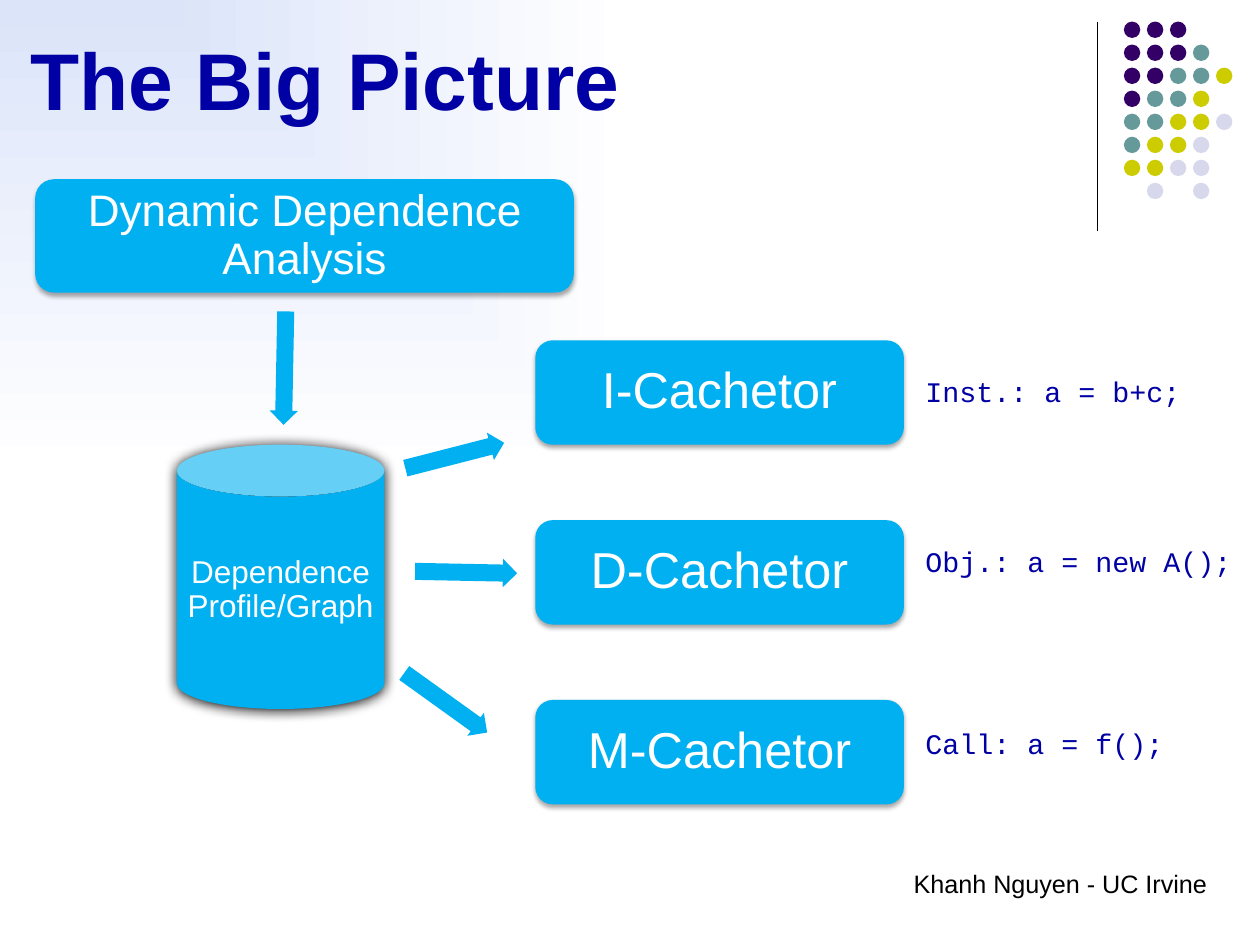
from lxml import etree
from pptx import Presentation
from pptx import util as u
from pptx.dml.color import RGBColor
from pptx.enum import shapes, text
from pptx.oxml import ns, parse_xml

TITLE = "The Big Picture"
FOOTER = "Khanh Nguyen - UC Irvine"
ANALYSIS = "Dynamic Dependence Analysis"
PROFILE = "Dependence Profile/Graph"
CACHETORS = [  # label, code example, top of the code
    ("I-Cachetor", "Inst.: a = b+c;", 3.25),
    ("D-Cachetor", "Obj.: a = new A();", 4.75),
    ("M-Cachetor", "Call: a = f();", 6.35),
]
ARROWS = [  # left, top, length, rotation
    (2.01, 3.12, 1.0, 91.1),
    (3.66, 4.92, 0.9, 1.1),
    (3.48, 6.07, 0.9, 35.7),
    (3.56, 3.89, 0.9, 345.6),
]
DOT_ROWS = ["PPP", "PPPT", "PPTTY", "PTTY", "TTYYL", "TYYL", "YYLL", " L L"]


class Theme:
    sans, mono = "Arial", "Courier New"
    navy, black, white, blue = "0000A4", "000000", "FFFFFF", "00B0F0"
    background = ("DBE4F9", "FFFFFF")
    dots = {"P": "330066", "T": "669999", "Y": "CCCC00", "L": "D8D8EC"}
    title, box, analysis, profile, code, footer = 51, 32, 28, 20, 18, 16


MIDDLE = text.MSO_ANCHOR.MIDDLE
CENTER = text.PP_ALIGN.CENTER


def rgb(color):
    return RGBColor.from_string(color)


def inches(*values):
    return [u.Inches(v) for v in values]


def write(sp, words, size, color, font=Theme.sans, align=None, anchor=None,
          inset=(0.1, 0.05), spacing=None, bold=None, wrap=True):
    tf = sp.text_frame
    tf.text = words
    tf.word_wrap = wrap
    tf.auto_size = text.MSO_AUTO_SIZE.NONE
    tf.vertical_anchor = anchor
    tf.margin_left = tf.margin_right = u.Inches(inset[0])
    tf.margin_top = tf.margin_bottom = u.Inches(inset[1])
    p = tf.paragraphs[0]
    p.alignment, p.line_spacing = align, spacing
    f = p.runs[0].font
    f.name, f.size, f.bold = font, u.Pt(size), bold
    f.color.rgb = rgb(color)


def add_solid(s, kind, box, color):
    sp = s.shapes.add_shape(kind, *inches(*box))
    sp.shadow.inherit = False
    sp.fill.solid()
    sp.fill.fore_color.rgb = rgb(color)
    sp.line.fill.background()
    return sp


def cast_shadow(sp, opacity, blur, distance):
    """Drop a black shadow straight down; blur and distance are in points."""
    effects = sp._element.spPr.find(ns.qn("a:effectLst"))
    effects.append(parse_xml(
        f'<a:outerShdw {ns.nsdecls("a")} blurRad="{u.Pt(blur)}" dist="{u.Pt(distance)}" '
        f'dir="5400000" rotWithShape="0"><a:srgbClr val="{Theme.black}">'
        f'<a:alpha val="{opacity * 1000}"/></a:srgbClr></a:outerShdw>'))


def add_box(s, box, words, size):
    sp = add_solid(s, shapes.MSO_SHAPE.ROUNDED_RECTANGLE, box, Theme.blue)
    cast_shadow(sp, 35, 3.1, 1.8)
    write(sp, words, size, Theme.white, align=CENTER, anchor=MIDDLE,
          inset=(0.04, 0.04), spacing=0.9)


def paint_background(s):
    """Fade from the top left corner."""
    fill = s.background.fill
    fill.gradient()
    for stop, position, color in zip(fill.gradient_stops, (0, 1), Theme.background):
        stop.position = position
        stop.color.rgb = rgb(color)
    lin = next(s._element.iter(ns.qn("a:lin")))
    lin.getparent().replace(lin, parse_xml(
        f'<a:path {ns.nsdecls("a")} path="rect"><a:fillToRect r="100000" b="100000"/></a:path>'))


def add_ornament(s):
    rule = s.shapes.add_connector(shapes.MSO_CONNECTOR.STRAIGHT,
                                  *inches(9.68, 0.19, 9.68, 2.04))
    rule.line.color.rgb = rgb(Theme.black)
    rule.line.width = u.Pt(0.75)
    etree.SubElement(rule._element.spPr, ns.qn("a:effectLst"))
    left, top, pitch, size = 9.91, 0.19, 0.203, 0.145
    for row, marks in enumerate(DOT_ROWS):
        for col, mark in enumerate(marks):
            if mark in Theme.dots:
                add_solid(s, shapes.MSO_SHAPE.OVAL,
                          (left + col * pitch, top + row * pitch, size, size),
                          Theme.dots[mark])


def add_flow(s):
    add_box(s, (0.31, 1.58, 4.75, 1), ANALYSIS, Theme.analysis)
    can = add_solid(s, shapes.MSO_SHAPE.CAN, (1.56, 3.92, 1.83, 2.33), Theme.blue)
    cast_shadow(can, 100, 8.5, 1)
    write(can, PROFILE, Theme.profile, Theme.white, align=CENTER, anchor=MIDDLE,
          inset=(0.04, 0.04), spacing=0.9)
    for left, top, length, rotation in ARROWS:
        arrow = add_solid(s, shapes.MSO_SHAPE.RIGHT_ARROW, (left, top, length, 0.25), Theme.blue)
        arrow.adjustments[0] = 0.6
        arrow.rotation = rotation
    for i, (label, code, code_top) in enumerate(CACHETORS):
        add_box(s, (4.72, 3 + i * 1.585, 3.25, 0.92), label, Theme.box)
        sp = s.shapes.add_textbox(*inches(8.06, code_top, 2.92, 0.4))
        write(sp, code, Theme.code, Theme.navy, font=Theme.mono, wrap=False)


def main():
    prs = Presentation()
    prs.slide_width, prs.slide_height = inches(11.11, 8.33)
    s = prs.slides.add_slide(prs.slide_layouts[5])
    paint_background(s)
    add_ornament(s)
    title = s.shapes.title
    title.left, title.top, title.width, title.height = inches(0.27, 0.33, 10.57, 1)
    write(title, TITLE, Theme.title, Theme.navy, align=text.PP_ALIGN.LEFT,
          anchor=text.MSO_ANCHOR.TOP, inset=(0, 0), spacing=0.95, bold=True)
    add_flow(s)
    footer = s.shapes.add_textbox(*inches(7.59, 7.59, 3.52, 0.56))
    write(footer, FOOTER, Theme.footer, Theme.black, align=CENTER, inset=(0.11, 0.06))
    prs.save("out.pptx")


if __name__ == "__main__":
    main()
